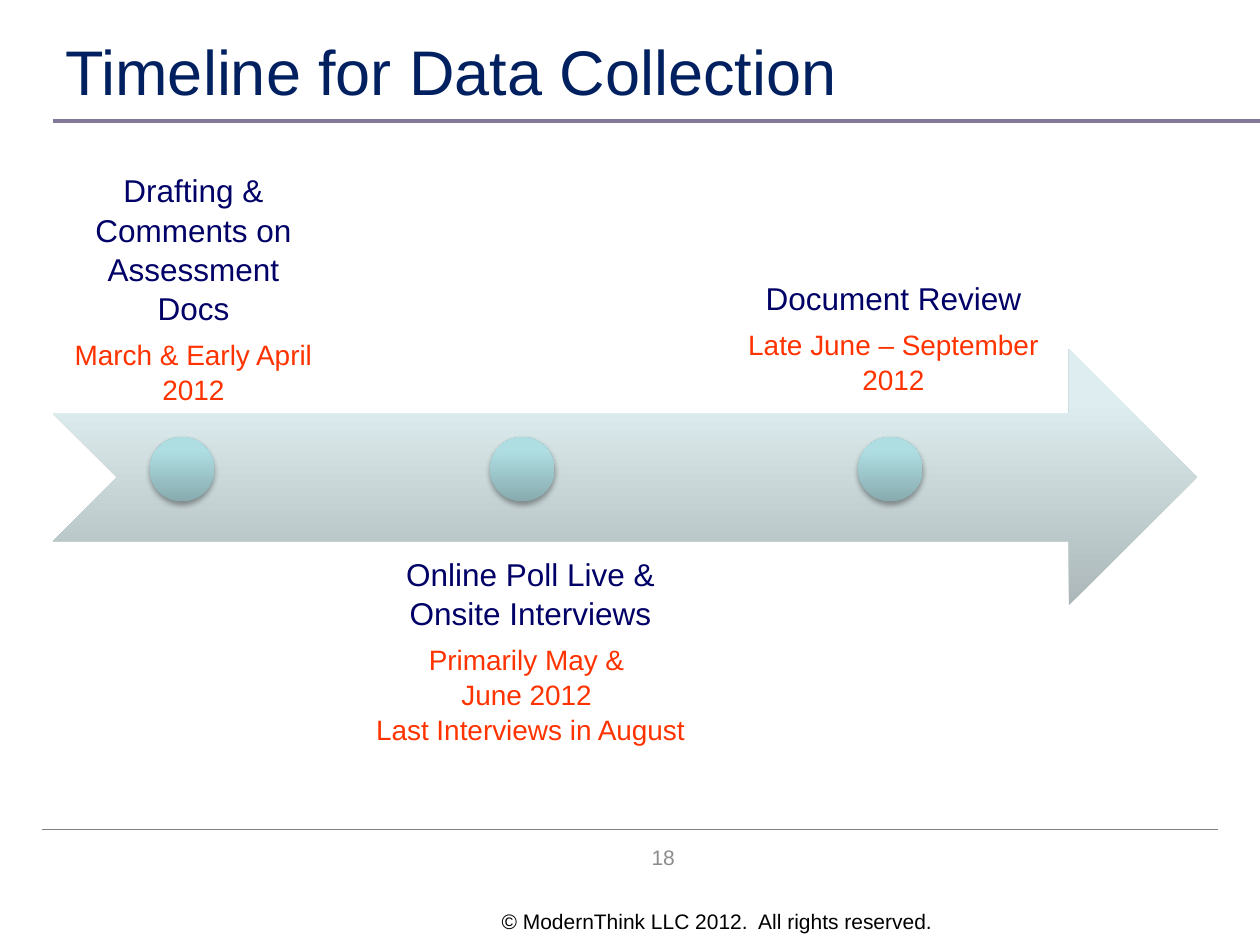
from lxml import etree
from pptx import Presentation
from pptx.dml.color import RGBColor
from pptx.enum.shapes import MSO_CONNECTOR, MSO_SHAPE
from pptx.enum.text import MSO_ANCHOR, PP_ALIGN
from pptx.oxml import parse_xml
from pptx.oxml.ns import qn
from pptx.util import Cm, Pt

LINE = MSO_CONNECTOR.STRAIGHT
ARROW, OVAL = MSO_SHAPE.NOTCHED_RIGHT_ARROW, MSO_SHAPE.OVAL
TOP, MID, LOW = MSO_ANCHOR.TOP, MSO_ANCHOR.MIDDLE, MSO_ANCHOR.BOTTOM
LEFT, MIDST, RIGHT = PP_ALIGN.LEFT, PP_ALIGN.CENTER, PP_ALIGN.RIGHT

THEME = {
    "font": "Arial",
    "title": (36, "002060"),
    "step": (18, "000066"),
    "date": (16, "FF3300"),
    "page": (12, "8C8C8C"),
    "foot": (12, "000000"),
    "rule": "837898",
    "base": "808080",
    "arrow": ("ABB7B8", "DEEDEF"),
    "dot": ("87ABAE", "AFDEE2"),
}

SHADE = (
    '<a:effectLst xmlns:a="http://schemas.openxmlformats.org/drawingml/2006/main">'
    '<a:outerShdw blurRad="40000" dist="23000" dir="5400000" rotWithShape="0">'
    '<a:srgbClr val="000000"><a:alpha val="35000"/></a:srgbClr>'
    '</a:outerShdw></a:effectLst>'
)

deck = Presentation()
deck.slide_width, deck.slide_height = Cm(25.4), Cm(19.05)
slide = deck.slides.add_slide(deck.slide_layouts[6])
shapes = slide.shapes


def write(text, area, anchor=MID, align=MIDST, pad=None, gap=1.0):
    frame = shapes.add_textbox(*map(Cm, area)).text_frame
    frame.word_wrap = True
    frame.vertical_anchor = anchor
    if pad:
        frame.margin_left = frame.margin_right = Cm(pad)
        frame.margin_top = frame.margin_bottom = Cm(pad)
    for i, (words, style, after) in enumerate(text):
        para = frame.add_paragraph() if i else frame.paragraphs[0]
        para.alignment = align
        para.line_spacing = gap
        para.space_after = Pt(after)
        run = para.add_run()
        run.text = words
        size, tint = THEME[style]
        run.font.name = THEME["font"]
        run.font.size = Pt(size)
        run.font.color.rgb = RGBColor.from_string(tint)


def draw(kind, area, tints):
    shape = shapes.add_shape(kind, *map(Cm, area))
    shape.shadow.inherit = False
    shape.line.fill.background()
    shape.fill.gradient()
    shape.fill.gradient_angle = 90
    for stop, tint, spot in zip(shape.fill.gradient_stops, tints, (0, 0.8)):
        stop.color.rgb = RGBColor.from_string(tint)
        stop.position = spot
    return shape


rules = [
    (1.07, 25.4, 2.44, "rule", 2.25),
    (0.84, 24.56, 16.72, "base", 0.75),
]
for start, end, y, tint, width in rules:
    rule = shapes.add_connector(LINE, Cm(start), Cm(y), Cm(end), Cm(y))
    rule.line.color.rgb = RGBColor.from_string(THEME[tint])
    rule.line.width = Pt(width)
    etree.SubElement(rule._element.spPr, qn("a:effectLst"))

write([("© ModernThink LLC 2012.  All rights reserved.", "foot", 0)],
      (8.69, 18.19, 10.36, 0.76), anchor=TOP, align=RIGHT)
write([("Timeline for Data Collection", "title", 0)],
      (1.07, 0.51, 17.98, 1.8), align=LEFT)
write([("18", "page", 0)], (10.41, 16.76, 5.92, 1.02))

draw(ARROW, (1.07, 7.04, 23.06, 5.16), THEME["arrow"])

steps = [
    (3.02, (1.07, 3.38, 5.66, 5.16), LOW, [
        ("Drafting & Comments on Assessment Docs", "step", 5),
        ("March & Early April 2012", "date", 5),
    ]),
    (9.88, (7.19, 10.8, 7.01, 5.16), TOP, [
        ("Online Poll Live &", "step", 0),
        ("Onsite Interviews", "step", 5),
        ("Primarily May & ", "date", 0),
        ("June 2012 ", "date", 0),
        ("Last Interviews in August", "date", 0),
    ]),
    (17.3, (14.2, 3.18, 7.62, 5.16), LOW, [
        ("Document Review", "step", 5),
        ("Late June – September 2012", "date", 5),
    ]),
]
for x, area, anchor, text in steps:
    write(text, area, anchor=anchor, pad=0.36, gap=1.04)
    dot = draw(OVAL, (x, 8.81, 1.3, 1.3), THEME["dot"])
    spot = dot._element.spPr
    spot.replace(spot.find(qn("a:effectLst")), parse_xml(SHADE))

deck.save("out.pptx")
